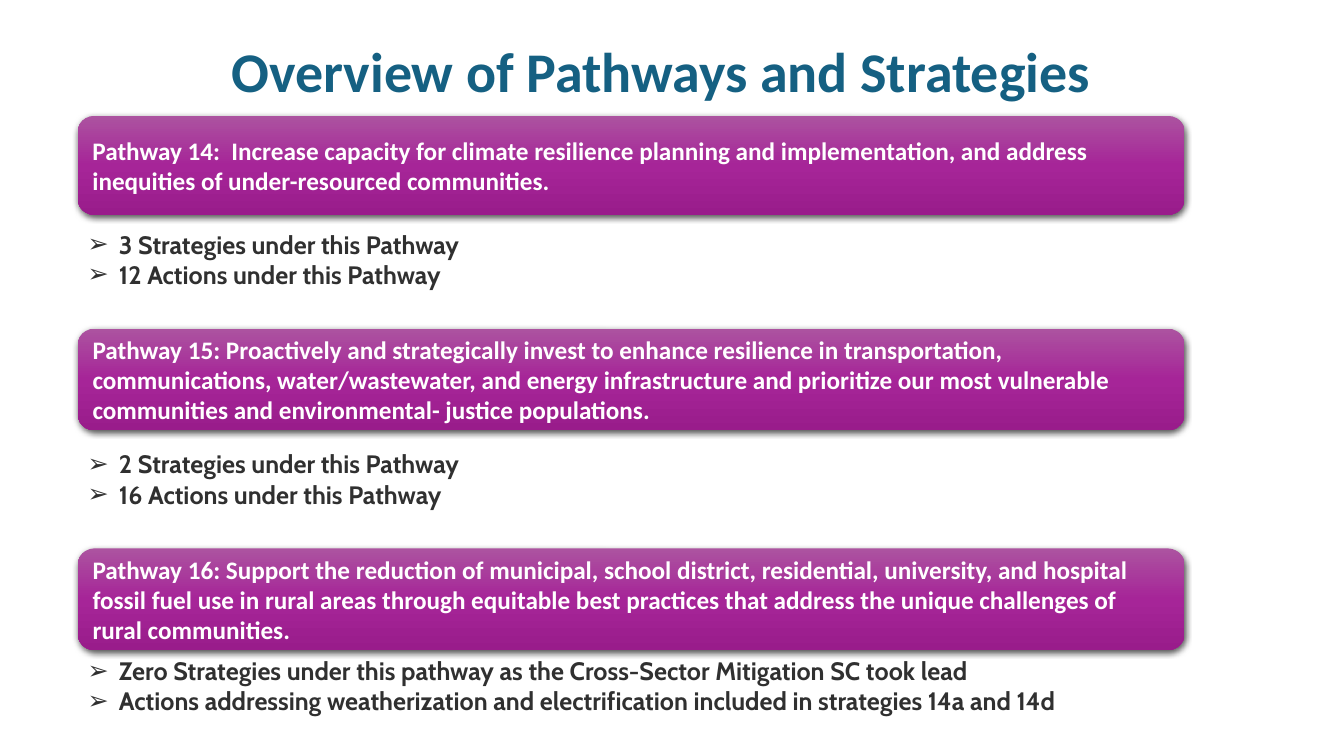
from copy import deepcopy

from lxml.etree import SubElement
from pptx import Presentation
from pptx.dml.color import RGBColor
from pptx.enum.shapes import MSO_SHAPE
from pptx.enum.text import MSO_ANCHOR, MSO_AUTO_SIZE, PP_ALIGN
from pptx.oxml import parse_xml
from pptx.oxml.ns import nsdecls, qn
from pptx.util import Inches, Pt

COLORS = {
    "title": "156082",
    "banner_top": "AC53A0",
    "banner_middle": "A62598",
    "banner_bottom": "991C8B",
    "banner_text": "FFFFFF",
    "list_text": "303030",
    "shadow": "000000",
}
LEFT = 0.77

# Each pathway: wording, banner top and height, list top and height, list items
PATHWAYS = [
    ("Pathway 14:  Increase capacity for climate resilience planning and "
     "implementation, and address inequities of under-resourced communities.",
     1.15, 0.98, 2.22, 0.71,
     ["3 Strategies under this Pathway", "12 Actions under this Pathway"]),
    ("Pathway 15: Proactively and strategically invest to enhance resilience in "
     "transportation, communications, water/wastewater, and energy infrastructure "
     "and prioritize our most vulnerable communities and environmental- justice "
     "populations.",
     3.26, 1.01, 4.4, 0.71,
     ["2 Strategies under this Pathway", "16 Actions under this Pathway"]),
    ("Pathway 16: Support the reduction of municipal, school district, residential, "
     "university, and hospital fossil fuel use in rural areas through equitable best "
     "practices that address the unique challenges of rural communities.",
     5.44, 1.01, 6.45, 1.01,
     ["Zero Strategies under this pathway as the Cross-Sector Mitigation SC took lead",
      "Actions addressing weatherization and electrification included in strategies "
      "14a and 14d"]),
]


def place(holder, left, top, width, height):
    holder.left, holder.top = Inches(left), Inches(top)
    holder.width, holder.height = Inches(width), Inches(height)
    frame = holder.text_frame
    frame.word_wrap = True
    frame.auto_size = MSO_AUTO_SIZE.NONE
    frame.vertical_anchor = MSO_ANCHOR.TOP
    return frame


def style(paragraph, typeface, size, color):
    for run in paragraph.runs:
        run.font.name = typeface
        run.font.size = Pt(size)
        run.font.bold = True
        run.font.color.rgb = RGBColor.from_string(COLORS[color])


prs = Presentation()
prs.slide_width, prs.slide_height = Inches(13.33), Inches(7.5)
slide = prs.slides.add_slide(prs.slide_layouts.get_by_name("Comparison"))

# Title
heading = place(slide.shapes.title, 0.42, 0.39, 12.27, 0.76)
heading.text = "Overview of Pathways and Strategies"
heading_line = heading.paragraphs[0]
heading_line.alignment = PP_ALIGN.CENTER
heading_line.line_spacing = 0.9
heading_line.space_before = Pt(10)
style(heading_line, "Calibri", 40, "title")

# The layout has four bodies; three hold the lists
*list_bodies, spare_body = list(slide.placeholders)[1:]
spare_body.element.getparent().remove(spare_body.element)

for pathway, list_body in zip(PATHWAYS, list_bodies):
    wording, banner_top, banner_height, list_top, list_height, items = pathway

    # Banner with a three-stop gradient
    banner = slide.shapes.add_shape(
        MSO_SHAPE.ROUNDED_RECTANGLE, Inches(LEFT), Inches(banner_top),
        Inches(10.98), Inches(banner_height))
    banner.line.fill.background()
    banner.fill.gradient()
    banner.fill.gradient_angle = 270
    first_stop = banner.element.spPr.find(".//" + qn("a:gs"))
    first_stop.addnext(deepcopy(first_stop))
    shades = ("banner_top", "banner_middle", "banner_bottom")
    for stop, shade, position in zip(banner.fill.gradient_stops, shades, (0, 0.5, 1)):
        stop.color.rgb = RGBColor.from_string(COLORS[shade])
        stop.color.brightness = 0
        stop.position = position

    # Soft shadow below the banner
    banner.shadow.inherit = False
    banner.element.spPr.find(qn("a:effectLst")).append(parse_xml(
        f'<a:outerShdw {nsdecls("a")} blurRad="{Pt(4.5)}" dist="{Pt(1.5)}" '
        f'dir="5400000" algn="ctr" rotWithShape="0">'
        f'<a:srgbClr val="{COLORS["shadow"]}"><a:alpha val="63000"/></a:srgbClr>'
        f'</a:outerShdw>'))

    # Pathway wording
    banner.text_frame.text = wording
    banner.text_frame.vertical_anchor = MSO_ANCHOR.MIDDLE
    banner_line = banner.text_frame.paragraphs[0]
    banner_line.alignment = PP_ALIGN.LEFT
    style(banner_line, "Calibri", 18, "banner_text")

    # Strategies and actions
    summary = place(list_body, LEFT, list_top, 10.28, list_height)
    summary.text = "\n".join(items)
    for item in summary.paragraphs:
        item.space_before = Pt(0)
        style(item, "Cabin", 18, "list_text")
        props = item._p.get_or_add_pPr()
        props.set("marL", str(Inches(0.31)))
        props.set("indent", str(Inches(-0.31)))
        SubElement(props, qn("a:buFont"), typeface="Arial")
        SubElement(props, qn("a:buChar"), char="➢")

prs.save("out.pptx")
